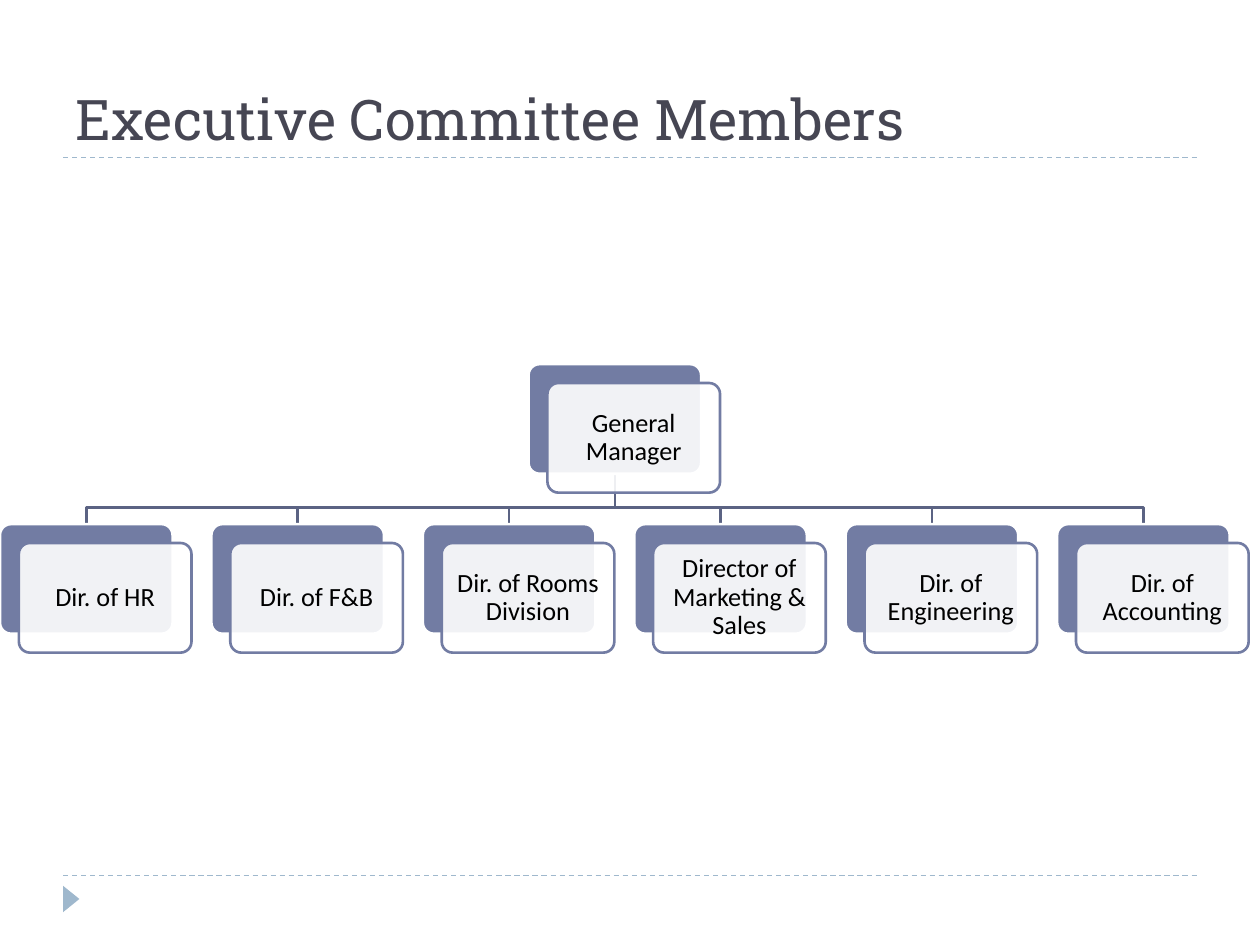
from lxml import etree
from pptx import Presentation
from pptx.dml.color import RGBColor
from pptx.enum.dml import MSO_LINE
from pptx.enum.shapes import MSO_CONNECTOR, MSO_SHAPE
from pptx.enum.text import MSO_ANCHOR, PP_ALIGN
from pptx.oxml.ns import qn
from pptx.util import Inches, Pt

COLORS = {"title": "464653", "rule": "9FB8CD", "card": "727CA3",
          "link": "5B6383", "white": "FFFFFF", "text": "000000"}
CARD_W, CARD_H = 1.37, 0.87
CARD_OFFSET = 0.15
CARD_PITCH = 1.678
LEVEL_DROP = 1.27
LINK_BEND = 0.13  # height of the shared horizontal link above the reports

MANAGER = "General Manager"
REPORTS = ["Dir. of HR", "Dir. of F&B", "Dir. of Rooms Division",
           "Director of Marketing & Sales", "Dir. of Engineering",
           "Dir. of Accounting"]


def color(name):
    return RGBColor.from_string(COLORS[name])


def add_rule(slide, left, top, width):
    rule = slide.shapes.add_connector(
        MSO_CONNECTOR.STRAIGHT, Inches(left), Inches(top),
        Inches(left + width), Inches(top))
    rule.line.color.rgb = color("rule")
    rule.line.width = Pt(0.75)
    rule.line.dash_style = MSO_LINE.DASH
    etree.SubElement(rule._element.spPr, qn("a:effectLst"))


def add_title(slide, left, top, width, height):
    box = slide.shapes.add_textbox(
        Inches(left), Inches(top), Inches(width), Inches(height))
    tf = box.text_frame
    tf.word_wrap = True
    tf.vertical_anchor = MSO_ANCHOR.BOTTOM
    p = tf.paragraphs[0]
    p.text = "Executive Committee Members"
    p.font.name = "Roboto Slab"
    p.font.size = Pt(32)
    p.font.color.rgb = color("title")
    add_rule(slide, left, top + height, width)


def add_footer(slide, left, top, width):
    add_rule(slide, left, top, width)
    marker = slide.shapes.add_shape(
        MSO_SHAPE.ISOSCELES_TRIANGLE, Inches(left - 0.04), Inches(top + 0.12),
        Inches(0.21), Inches(0.13))
    marker.rotation = 90
    marker.shadow.inherit = False
    marker.fill.solid()
    marker.fill.fore_color.rgb = color("rule")
    marker.line.fill.background()


def add_panel(slide, left, top, fill, line):
    panel = slide.shapes.add_shape(
        MSO_SHAPE.ROUNDED_RECTANGLE, Inches(left), Inches(top),
        Inches(CARD_W), Inches(CARD_H))
    panel.adjustments[0] = 0.1
    panel.shadow.inherit = False
    panel.fill.solid()
    panel.fill.fore_color.rgb = color(fill)
    panel.line.color.rgb = color(line)
    panel.line.width = Pt(1.5)
    return panel


def add_card(slide, left, top, label):
    """Solid back panel with a translucent, labelled panel in front."""
    add_panel(slide, left, top, "card", "white")
    front = add_panel(slide, left + CARD_OFFSET, top + CARD_OFFSET,
                      "white", "card")
    srgb = front._element.spPr.find(qn("a:solidFill")).find(qn("a:srgbClr"))
    etree.SubElement(srgb, qn("a:alpha"), val="90000")

    tf = front.text_frame
    tf.word_wrap = True
    tf.vertical_anchor = MSO_ANCHOR.MIDDLE
    tf.margin_left = tf.margin_right = Inches(0.06)
    tf.margin_top = tf.margin_bottom = Inches(0.06)
    p = tf.paragraphs[0]
    p.text = label
    p.alignment = PP_ALIGN.CENTER
    p.line_spacing = 0.9
    p.space_after = Pt(5)
    p.font.name = "Calibri"
    p.font.size = Pt(15)
    p.font.color.rgb = color("text")


def add_link(slide, x1, y1, x2, y2):
    """Line from (x1, y1) down, across and down to (x2, y2)."""
    bend = y2 - LINK_BEND
    builder = slide.shapes.build_freeform(Inches(x1), Inches(y1))
    builder.add_line_segments(
        [(Inches(x), Inches(y)) for x, y in ((x1, bend), (x2, bend), (x2, y2))],
        close=False)
    link = builder.convert_to_shape()
    link.shadow.inherit = False
    link.fill.background()
    link.line.color.rgb = color("link")
    link.line.width = Pt(1.5)


def add_org_chart(slide, left, top):
    lefts = [left + i * CARD_PITCH for i in range(len(REPORTS))]
    manager_left = (lefts[0] + lefts[-1]) / 2
    report_top = top + LEVEL_DROP
    for x in lefts:
        add_link(slide, manager_left + CARD_W / 2, top + CARD_H,
                 x + CARD_W / 2, report_top)
    add_card(slide, manager_left, top, MANAGER)
    for x, label in zip(lefts, REPORTS):
        add_card(slide, x, report_top, label)


def main():
    prs = Presentation()
    prs.slide_width, prs.slide_height = Inches(10), Inches(7.5)
    slide = prs.slides.add_slide(prs.slide_layouts[6])
    add_footer(slide, 0.5, 6.95, 9)
    add_title(slide, 0.5, 0.17, 9, 1.08)
    add_org_chart(slide, 0, 2.89)
    prs.save("out.pptx")


if __name__ == "__main__":
    main()
